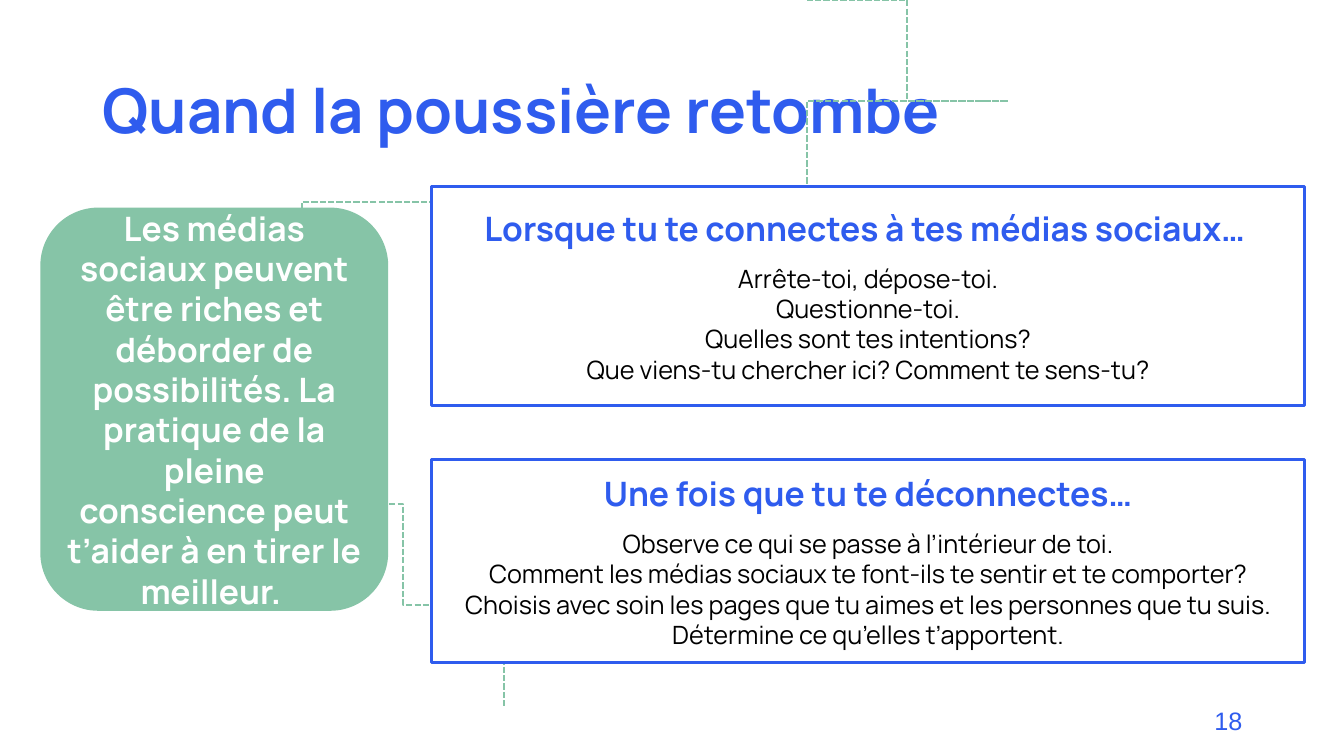
from dataclasses import dataclass

from pptx import Presentation
from pptx.dml.color import RGBColor
from pptx.enum import dml, shapes, text
from pptx.util import Inches, Pt

BLUE, GREEN, WHITE, BLACK = "2F5CEE", "86C4A7", "FFFFFF", "000000"
FONT = "Manrope"
MID = text.MSO_ANCHOR.MIDDLE
CENTER, RIGHT = text.PP_ALIGN.CENTER, text.PP_ALIGN.RIGHT
STEPS = 24

START = (8.03, -0.01)
CURVES = [
    ((9.09, 0.4), (10.15, 0.82), (9.39, 1.21)),
    ((8.63, 1.6), (4.71, 1.9), (3.49, 2.33)),
    ((2.27, 2.77), (1.9, 3.18), (2.07, 3.81)),
    ((2.24, 4.43), (4.09, 5.58), (4.5, 6.07)),
    ((4.91, 6.56), (4.73, 6.66), (4.54, 6.75)),
]


@dataclass
class Card:
    top: float
    height: float
    head: str
    lines: list[str]


CARDS = [
    Card(1.85, 2.17, "Lorsque tu te connectes à tes médias sociaux… ", [
        "Arrête-toi, dépose-toi.",
        "Questionne-toi.",
        "Quelles sont tes intentions?",
        "Que viens-tu chercher ici? Comment te sens-tu?",
    ]),
    Card(4.56, 2.01, "Une fois que tu te déconnectes…", [
        "Observe ce qui se passe à l’intérieur de toi.",
        "Comment les médias sociaux te font-ils te sentir et te comporter?",
        "Choisis avec soin les pages que tu aimes et les personnes que tu suis.",
        "Détermine ce qu’elles t’apportent.",
    ]),
]


def paint(fmt, color: str) -> None:
    """Give a fill or a line one solid colour."""
    fill = getattr(fmt, "fill", fmt)
    fill.solid()
    fill.fore_color.rgb = RGBColor.from_string(color)


def style(par, size: int, color: str, bold=False, align=None, face=FONT) -> None:
    par.alignment = align
    for run in par.runs:
        run.font.name, run.font.size, run.font.bold = face, Pt(size), bold
        paint(run.font, color)


def place(shape, left: float, top: float, width: float, height: float) -> None:
    shape.left, shape.top = Inches(left), Inches(top)
    shape.width, shape.height = Inches(width), Inches(height)


def bezier(start, one, two, end) -> list[tuple[float, float]]:
    """Return points along a cubic curve, without its start."""
    points = []
    for step in range(1, STEPS + 1):
        t = step / STEPS
        u = 1 - t
        points.append(tuple(
            u**3 * a + 3 * u * u * t * b + 3 * u * t * t * c + t**3 * d
            for a, b, c, d in zip(start, one, two, end)
        ))
    return points


def add_trail(slide) -> None:
    pen = slide.shapes.build_freeform(*START, scale=Inches(1))
    last = START
    for curve in CURVES:
        pen.add_line_segments(bezier(last, *curve), close=False)
        last = curve[-1]
    trail = pen.convert_to_shape()
    trail.shadow.inherit = False
    trail.fill.background()
    paint(trail.line, GREEN)
    trail.line.width = Pt(1.5)
    trail.line.dash_style = dml.MSO_LINE.SQUARE_DOT


def add_box(slide, kind, area: tuple, fill: str, words: str):
    box = slide.shapes.add_shape(kind, 0, 0, 0, 0)
    place(box, *area)
    box.shadow.inherit = False
    paint(box.fill, fill)
    box.line.fill.background()
    frame = box.text_frame
    frame.word_wrap = True
    frame.vertical_anchor = MID
    frame.text = words
    return box


def add_card(slide, card: Card) -> None:
    box = add_box(slide, shapes.MSO_SHAPE.RECTANGLE,
                  (4.28, card.top, 8.66, card.height), WHITE,
                  "\n".join([card.head, *card.lines]))
    paint(box.line, BLUE)
    box.line.width = Pt(2.25)
    head, *rest = box.text_frame.paragraphs
    style(head, 24, BLUE, True, CENTER)
    head.space_after = Pt(11)
    for par in rest:
        style(par, 18, BLACK, False, CENTER)


def add_title(slide) -> None:
    title = slide.shapes.title
    place(title, 0.92, 0.4, 11.5, 1.45)
    frame = title.text_frame
    frame.text = "Quand la poussière retombe"
    frame.word_wrap = True
    frame.auto_size = text.MSO_AUTO_SIZE.NONE
    frame.vertical_anchor = MID
    par = frame.paragraphs[0]
    style(par, 44, BLUE, True, text.PP_ALIGN.LEFT)
    par.line_spacing = 0.9


def add_number(slide) -> None:
    box = slide.shapes.add_textbox(0, 0, 0, 0)
    place(box, 9.42, 6.95, 3, 0.4)
    frame = box.text_frame
    frame.word_wrap = True
    frame.text = "18"
    style(frame.paragraphs[0], 18, BLUE, False, RIGHT, "Arial")


def main() -> None:
    deck = Presentation()
    deck.slide_width, deck.slide_height = Inches(13.33), Inches(7.5)
    slide = deck.slides.add_slide(deck.slide_layouts[5])
    add_title(slide)
    add_trail(slide)
    add_number(slide)
    note = add_box(
        slide, shapes.MSO_SHAPE.ROUNDED_RECTANGLE, (0.4, 2.06, 3.45, 4), GREEN,
        "Les médias sociaux peuvent être riches et déborder de possibilités. "
        "La pratique de la pleine conscience peut t’aider à en tirer le meilleur. ")
    style(note.text_frame.paragraphs[0], 24, WHITE, True, CENTER)
    for card in CARDS:
        add_card(slide, card)
    deck.save("out.pptx")


if __name__ == "__main__":
    main()
